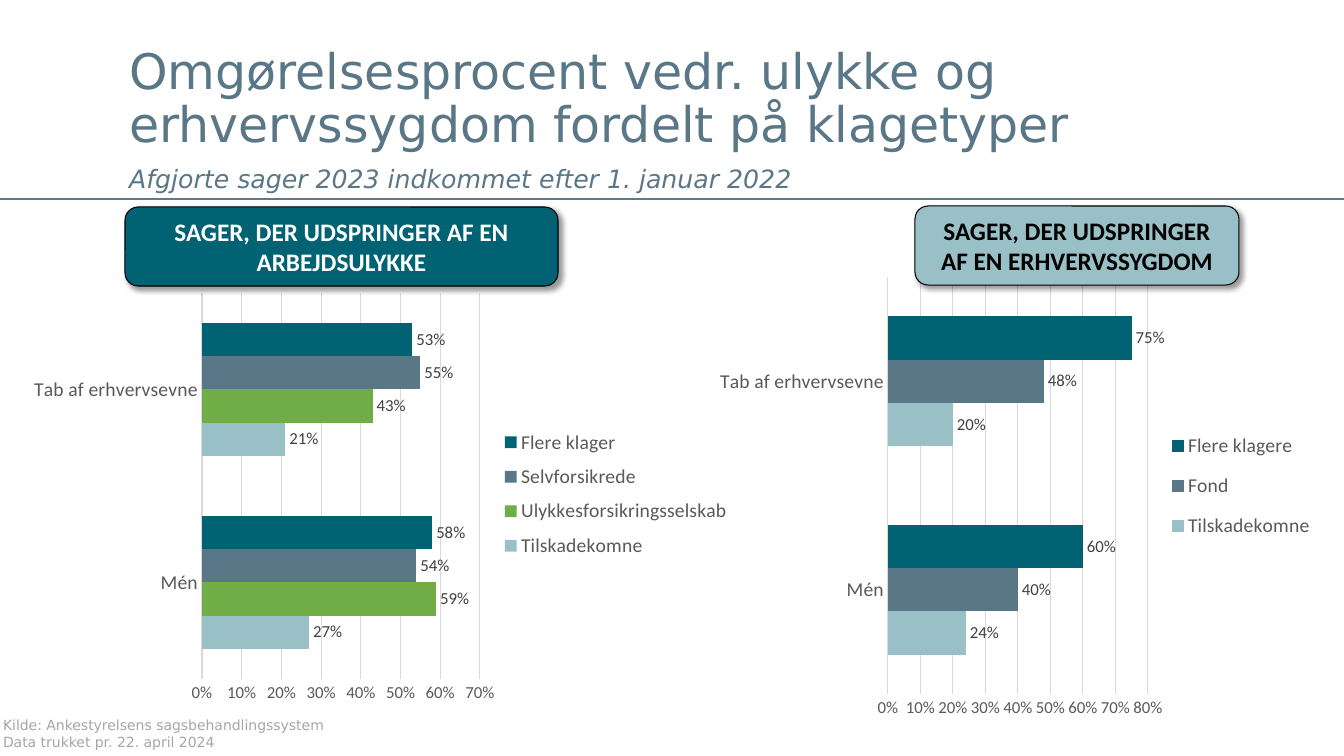
from lxml.etree import SubElement
from pptx import Presentation
from pptx.chart.data import CategoryChartData
from pptx.dml.color import RGBColor
from pptx.enum.chart import XL_CHART_TYPE, XL_LABEL_POSITION, XL_LEGEND_POSITION, XL_TICK_MARK
from pptx.enum.shapes import MSO_CONNECTOR, MSO_SHAPE
from pptx.enum.text import MSO_ANCHOR, MSO_AUTO_SIZE, PP_ALIGN
from pptx.oxml.ns import qn
from pptx.util import Emu, Pt

SLIDE_SIZE = (1344, 756)
TEAL, SLATE, GREEN, PALE = "006272", "597786", "70AD47", "99C0C6"
GREY, GRID, BLACK, WHITE = "595959", "D9D9D9", "000000", "FFFFFF"
HEADING_FONT, BODY_FONT = "DejaVu Sans", "Calibri"

HEADING = "Omgørelsesprocent vedr. ulykke og erhvervssygdom fordelt på klagetyper"
SUBHEADING = "Afgjorte sager 2023 indkommet efter 1. januar 2022"
HEADING_BOX = (119, 42, 1043, 150)
RULE_Y = 199
SOURCE_LINES = ["Kilde: Ankestyrelsens sagsbehandlingssystem", "Data trukket pr. 22. april 2024"]
SOURCE_BOX = (0, 712, 341, 44)
CATEGORIES = ["Mén", "Tab af erhvervsevne"]

# All boxes are (left, top, width, height) in px on the slide.
PANELS = [
    {
        "badge": "SAGER, DER UDSPRINGER AF EN ERHVERVSSYGDOM",
        "badge_box": (915, 206, 324, 79), "badge_fill": PALE, "badge_ink": BLACK,
        "chart_box": (708, 267, 626, 461),
        "plot_box": (888, 277, 260, 417),
        "legend_box": (1166, 418, 150, 136),
        "axis_max": 0.8,
        "series": [
            ("Tilskadekomne", (0.24, 0.20), PALE),
            ("Fond", (0.40, 0.48), SLATE),
            ("Flere klagere", (0.60, 0.75), TEAL),
        ],
    },
    {
        "badge": "SAGER, DER UDSPRINGER AF EN ARBEJDSULYKKE",
        "badge_box": (125, 207, 433, 79), "badge_fill": TEAL, "badge_ink": WHITE,
        "chart_box": (20, 284, 733, 427),
        "plot_box": (202, 293, 278, 386),
        "legend_box": (500, 420, 232, 148),
        "axis_max": 0.7,
        "series": [
            ("Tilskadekomne", (0.27, 0.21), PALE),
            ("Ulykkesforsikringsselskab", (0.59, 0.43), GREEN),
            ("Selvforsikrede", (0.54, 0.55), SLATE),
            ("Flere klager", (0.58, 0.53), TEAL),
        ],
    },
]


def px(length):
    return Emu(round(length * 914400 / 100.8))


def emu_box(box):
    return [px(length) for length in box]


def color(hex_code):
    return RGBColor.from_string(hex_code)


def style(font, size, ink, name=BODY_FONT, bold=False, italic=False):
    font.size, font.name, font.bold, font.italic = Pt(size), name, bold, italic
    font.color.rgb = color(ink)


def add_run(paragraph, text, *args, **kwargs):
    run = paragraph.add_run()
    run.text = text
    style(run.font, *args, **kwargs)


def add_shadow(shape):
    effects = SubElement(shape._element.spPr, qn("a:effectLst"))
    outer = SubElement(effects, qn("a:outerShdw"), blurRad=str(Pt(4)), dist=str(Pt(3)),
                       dir="2700000", algn="tl", rotWithShape="0")
    ink = SubElement(outer, qn("a:srgbClr"), val=BLACK)
    SubElement(ink, qn("a:alpha"), val="40000")


def fix_layout(element, index, box, chart_box, inner=False):
    """Pin a chart part to a slide box, as fractions of the chart frame."""
    for old in element.findall(qn("c:layout")):
        element.remove(old)
    layout = SubElement(element, qn("c:layout"))
    element.insert(index, layout)
    manual = SubElement(layout, qn("c:manualLayout"))
    if inner:
        SubElement(manual, qn("c:layoutTarget"), val="inner")
    for tag in ("xMode", "yMode"):
        SubElement(manual, qn(f"c:{tag}"), val="edge")
    left, top, width, height = box
    frame_left, frame_top, frame_width, frame_height = chart_box
    fractions = {"x": (left - frame_left) / frame_width, "y": (top - frame_top) / frame_height,
                 "w": width / frame_width, "h": height / frame_height}
    for tag, value in fractions.items():
        SubElement(manual, qn(f"c:{tag}"), val=f"{value:.4f}")


def style_axis(axis, size):
    axis.major_tick_mark = axis.minor_tick_mark = XL_TICK_MARK.NONE
    style(axis.tick_labels.font, size, GREY)


def style_grid_line(line):
    line.color.rgb = color(GRID)
    line.width = Pt(0.75)


def add_bar_chart(slide, panel):
    data = CategoryChartData(number_format="0%")
    data.categories = CATEGORIES
    for name, values, _ in panel["series"]:
        data.add_series(name, values)
    chart = slide.shapes.add_chart(
        XL_CHART_TYPE.BAR_CLUSTERED, *emu_box(panel["chart_box"]), data).chart
    style(chart.font, 12, BLACK)
    chart.has_title = False

    style_axis(chart.category_axis, 14)
    style_grid_line(chart.category_axis.format.line)
    percent_axis = chart.value_axis
    style_axis(percent_axis, 12)
    percent_axis.minimum_scale, percent_axis.maximum_scale = 0, panel["axis_max"]
    percent_axis.major_unit = 0.1
    percent_axis.tick_labels.number_format = "0%"
    percent_axis.tick_labels.number_format_is_linked = False
    percent_axis.format.line.fill.background()
    style_grid_line(percent_axis.major_gridlines.format.line)

    bars = chart.plots[0]
    bars.gap_width, bars.overlap, bars.vary_by_categories = 182, 0, False
    for series, (_, _, fill) in zip(bars.series, panel["series"]):
        series.format.fill.solid()
        series.format.fill.fore_color.rgb = color(fill)
        labels = series.data_labels
        labels.show_value = True
        labels.position = XL_LABEL_POSITION.OUTSIDE_END
        labels.number_format, labels.number_format_is_linked = "0%", False
        style(labels.font, 12, "404040")

    chart.has_legend = True
    chart.legend.position = XL_LEGEND_POSITION.RIGHT
    chart.legend.include_in_layout = False
    style(chart.legend.font, 14, GREY)
    plot_area = chart._chartSpace.chart.plotArea
    fix_layout(plot_area, 0, panel["plot_box"], panel["chart_box"], inner=True)
    fix_layout(chart.legend._element, 1, panel["legend_box"], panel["chart_box"])


def add_badge(slide, panel):
    badge = slide.shapes.add_shape(MSO_SHAPE.ROUNDED_RECTANGLE, *emu_box(panel["badge_box"]))
    badge.fill.solid()
    badge.fill.fore_color.rgb = color(panel["badge_fill"])
    badge.line.color.rgb = color(BLACK)
    badge.line.width = Pt(0.75)
    add_shadow(badge)
    badge.text_frame.word_wrap = True
    paragraph = badge.text_frame.paragraphs[0]
    paragraph.alignment = PP_ALIGN.CENTER
    add_run(paragraph, panel["badge"], 18, panel["badge_ink"], bold=True)


def add_heading(slide):
    title = slide.shapes.title
    title.left, title.top, title.width, title.height = emu_box(HEADING_BOX)
    frame = title.text_frame
    frame.word_wrap, frame.auto_size = True, MSO_AUTO_SIZE.NONE
    frame.vertical_anchor = MSO_ANCHOR.TOP
    heading, subheading = frame.paragraphs[0], frame.add_paragraph()
    for paragraph in (heading, subheading):
        paragraph.alignment, paragraph.line_spacing = PP_ALIGN.LEFT, 0.9
    subheading.space_before = Pt(10)
    add_run(heading, HEADING, 35, SLATE, HEADING_FONT)
    add_run(subheading, SUBHEADING, 18, SLATE, HEADING_FONT, italic=True)


def add_rule(slide):
    rule = slide.shapes.add_connector(
        MSO_CONNECTOR.STRAIGHT, 0, px(RULE_Y), px(SLIDE_SIZE[0]), px(RULE_Y))
    rule.line.color.rgb = color("5F7B8A")
    rule.line.width = Pt(1.25)
    SubElement(rule._element.spPr, qn("a:effectLst"))


def add_source(slide):
    frame = slide.shapes.add_textbox(*emu_box(SOURCE_BOX)).text_frame
    frame.word_wrap = False
    frame.margin_left = px(3)
    for number, line in enumerate(SOURCE_LINES):
        paragraph = frame.add_paragraph() if number else frame.paragraphs[0]
        paragraph.alignment = PP_ALIGN.LEFT
        add_run(paragraph, line, 10, "A6A6A6", HEADING_FONT)


def main():
    deck = Presentation()
    deck.slide_width, deck.slide_height = emu_box(SLIDE_SIZE)
    slide = deck.slides.add_slide(deck.slide_layouts[5])
    add_rule(slide)
    add_heading(slide)
    add_source(slide)
    for panel in PANELS:
        add_bar_chart(slide, panel)
        add_badge(slide, panel)
    deck.save("out.pptx")


if __name__ == "__main__":
    main()
